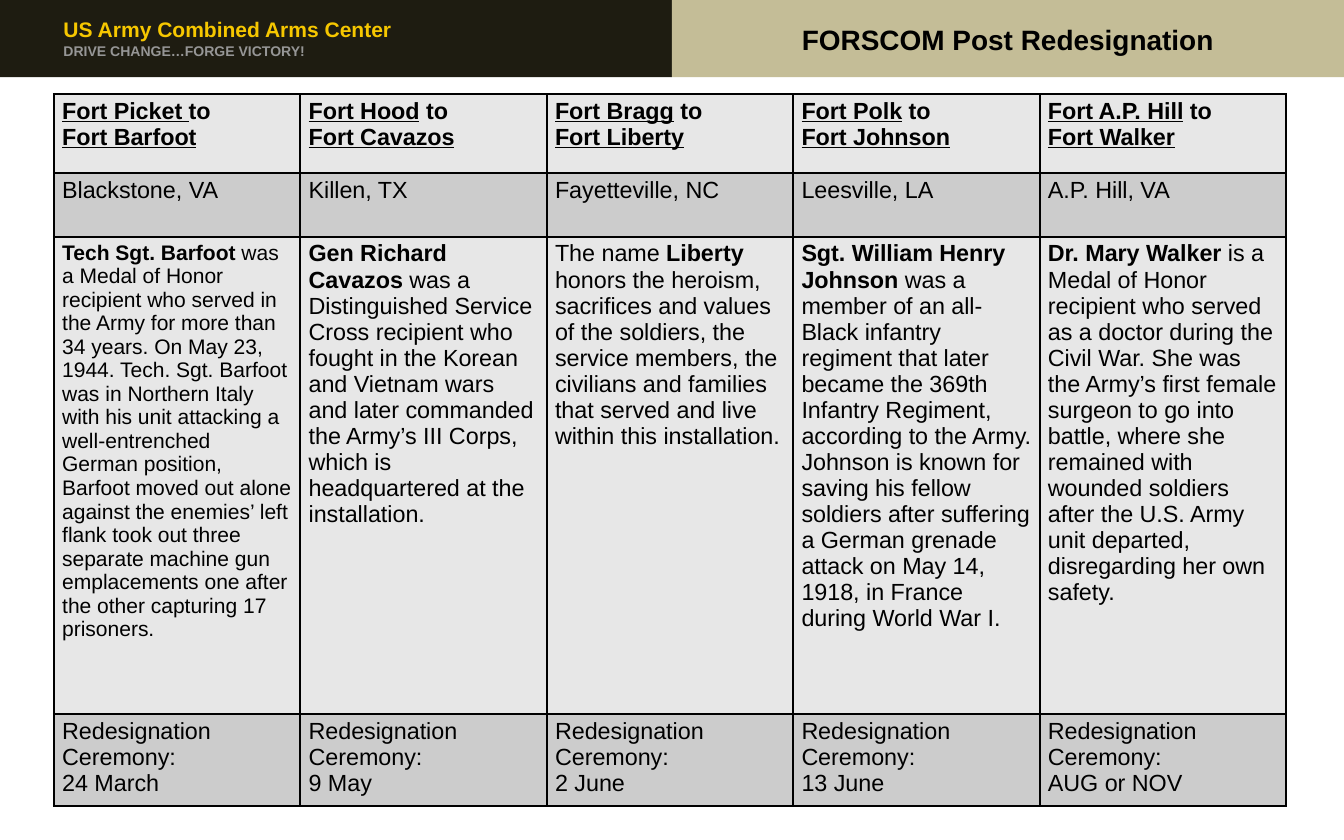
"""Build a one-slide table of renamed Army posts."""
from lxml import etree
from pptx import Presentation
from pptx.dml.color import RGBColor
from pptx.enum.shapes import MSO_SHAPE
from pptx.enum.text import MSO_ANCHOR, PP_ALIGN
from pptx.oxml import parse_xml
from pptx.oxml.ns import nsdecls
from pptx.util import Inches, Pt

POSTS = [
    ("|Fort Picket |to", "|Fort Barfoot", "Blackstone, VA", "24 March", 9,
     "|Tech Sgt. Barfoot |was a Medal of Honor recipient who served in the Army for more "
     "than 34 years. On May 23, 1944. Tech. Sgt. Barfoot was in Northern Italy with his "
     "unit attacking a well-entrenched German position, Barfoot moved out alone against "
     "the enemies’ left flank took out three separate machine gun emplacements one after "
     "the other capturing 17 prisoners."),
    ("|Fort Hood| to", "|Fort Cavazos", "Killen, TX", "9 May", 10,
     "|Gen Richard Cavazos |was a Distinguished Service Cross recipient who fought in the "
     "Korean and Vietnam wars and later commanded the Army’s III Corps, which is "
     "headquartered at the installation."),
    ("|Fort Bragg| to", "|Fort Liberty", "Fayetteville, NC", "2 June", 10,
     "The name |Liberty| honors the heroism, sacrifices and values of the soldiers, the "
     "service members, the civilians and families that served and live within this "
     "installation."),
    ("|Fort Polk| to", "|Fort Johnson", "Leesville, LA", "13 June", 10,
     "|Sgt. William Henry Johnson |was a member of an all-Black infantry regiment that "
     "later became the 369th Infantry Regiment, according to the Army. Johnson is known "
     "for saving his fellow soldiers after suffering a German grenade attack on May 14, "
     "1918, in France during World War I."),
    ("|Fort A.P. Hill| to", "|Fort Walker", "A.P. Hill, VA", "AUG or NOV", 10,
     "|Dr. Mary Walker| is a Medal of Honor recipient who served as a doctor during the "
     "Civil War. She was the Army’s first female surgeon to go into battle, where she "
     "remained with wounded soldiers after the U.S. Army unit departed, disregarding her "
     "own safety."),
]
ROW_HEIGHTS = [4.7, 3.8, 28.4, 5.5]
ROW_FILLS = ["E7E7E7", "CCCCCC"]
COLUMN_WIDTH = 14.67


def color(hex_string):
    """Turn a hex string into a colour."""
    return RGBColor.from_string(hex_string)


def grid(units):
    """Convert units of an 80 by 50 slide grid into a length."""
    return Inches(units / 10)


class SlideBuilder:
    """Hold the style and the current slide."""

    font_name = "Arial"
    ink = "000000"

    def __init__(self, presentation):
        """Add a blank slide."""
        self.slide = presentation.slides.add_slide(presentation.slide_layouts[6])

    def style(self, paragraph, size, hex_string, bold):
        """Set the font of a whole paragraph."""
        font = paragraph.font
        font.name, font.size, font.bold = self.font_name, Pt(size), bold
        font.color.rgb = color(hex_string)

    def banner(self, left, fill, lines=(), indent=0):
        """Draw half of the header band with lines of bold text."""
        shape = self.slide.shapes.add_shape(
            MSO_SHAPE.RECTANGLE, grid(left), grid(-0.1), grid(40), grid(4.7))
        shape.shadow.inherit = False
        shape.fill.solid()
        shape.fill.fore_color.rgb = color(fill)
        shape.line.fill.background()
        self.write_lines(shape.text_frame, lines, PP_ALIGN.LEFT, indent)

    def title(self, left, text, size):
        """Write the centred slide title over a banner."""
        box = self.slide.shapes.add_textbox(grid(left), 0, grid(40), grid(4.7))
        self.write_lines(box.text_frame, [(text, size, self.ink)], PP_ALIGN.CENTER)

    def write_lines(self, frame, lines, alignment, indent=0):
        """Fill a frame with (text, size, colour) lines."""
        frame.word_wrap = True
        frame.vertical_anchor = MSO_ANCHOR.MIDDLE
        for index, (text, size, hex_string) in enumerate(lines):
            paragraph = frame.add_paragraph() if index else frame.paragraphs[0]
            paragraph.text = text
            paragraph.alignment = alignment
            if indent:
                paragraph._p.get_or_add_pPr().set("marL", str(grid(indent)))
            self.style(paragraph, size, hex_string, True)

    def table(self, left, top, column_width, row_heights):
        """Add an evenly spaced table without style bands."""
        columns = len(POSTS)
        table = self.slide.shapes.add_table(
            len(row_heights), columns, grid(left), grid(top),
            grid(column_width * columns), grid(sum(row_heights))).table
        table.first_row = table.horz_banding = False
        for column in table.columns:
            column.width = grid(column_width)
        for row, height in zip(table.rows, row_heights):
            row.height = grid(height)
        return table

    def cell(self, cell, fill, lines, size=10, header=False):
        """Fill a cell, emphasising the text between bars."""
        cell.margin_left = cell.margin_right = grid(0.5)
        cell.margin_top = cell.margin_bottom = grid(0.25)
        cell.fill.solid()
        cell.fill.fore_color.rgb = color(fill)
        self.borders(cell)
        for index, line in enumerate(lines):
            frame = cell.text_frame
            paragraph = frame.add_paragraph() if index else frame.paragraphs[0]
            self.style(paragraph, size, self.ink, header)
            for position, text in enumerate(line.split("|")):
                if text:
                    run = paragraph.add_run()
                    run.text = text
                    emphasis = position % 2 == 1
                    run.font.bold = header or emphasis
                    run.font.underline = header and emphasis

    def borders(self, cell):
        """Draw a thin line on each side of a cell."""
        properties = cell._tc.get_or_add_tcPr()
        for index, side in enumerate(("lnL", "lnR", "lnT", "lnB")):
            line = parse_xml(f'<a:{side} {nsdecls("a")} w="{Pt(1)}"/>')
            fill = etree.SubElement(line, line.tag.replace(side, "solidFill"))
            etree.SubElement(fill, line.tag.replace(side, "srgbClr"), val=self.ink)
            properties.insert(index, line)


def main():
    """Build and save the slide."""
    presentation = Presentation()
    presentation.slide_width, presentation.slide_height = grid(80), grid(50)
    builder = SlideBuilder(presentation)
    builder.banner(0, "1E1C11", [
        ("US Army Combined Arms Center", 9, "F6C700"),
        ("DRIVE CHANGE…FORGE VICTORY!", 6, "969696")], indent=2.8)
    builder.banner(40, "C4BD97")
    builder.title(40, "FORSCOM Post Redesignation", 12)
    table = builder.table(3.2, 5.6, COLUMN_WIDTH, ROW_HEIGHTS)
    for column, (old, new, place, date, size, story) in enumerate(POSTS):
        rows = [[old, new], [place], [story], ["Redesignation Ceremony:", date]]
        for row, lines in enumerate(rows):
            builder.cell(table.cell(row, column), ROW_FILLS[row % 2], lines,
                         size if row == 2 else 10, header=row == 0)
    presentation.save("out.pptx")


if __name__ == "__main__":
    main()
